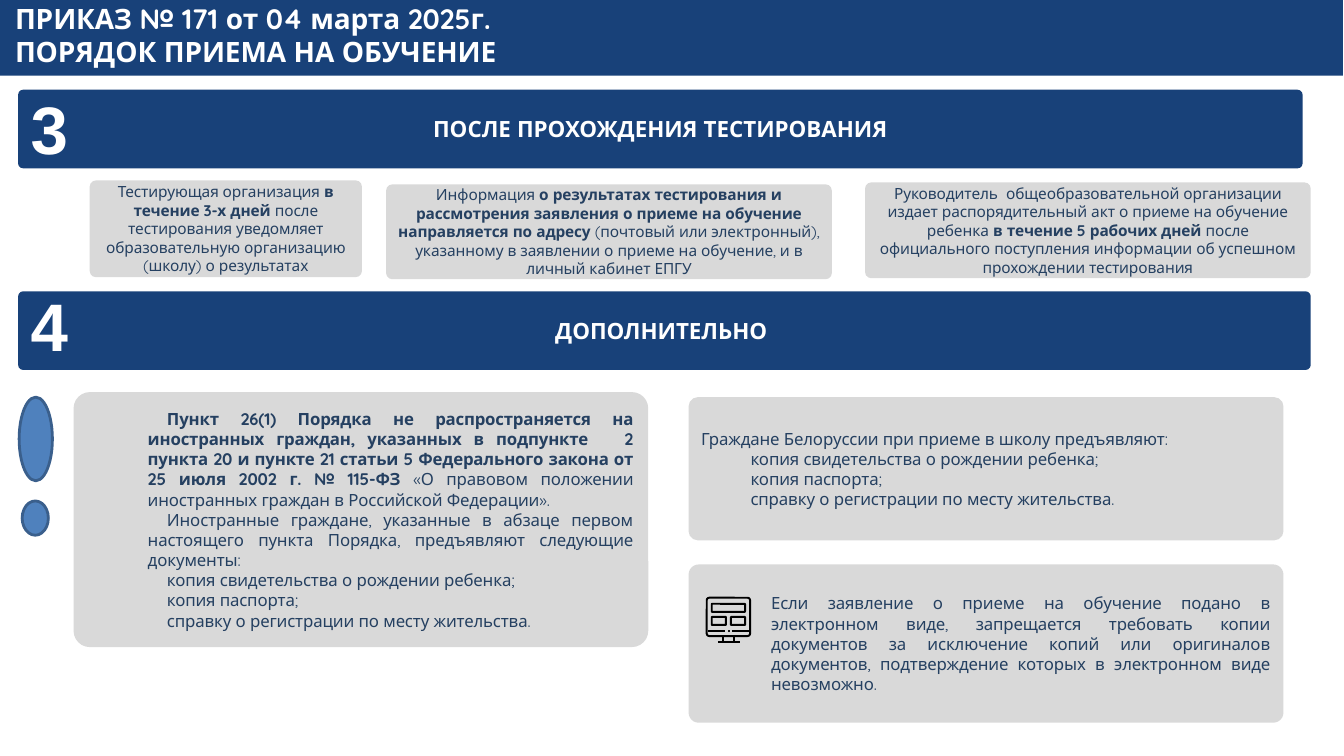
from pptx import Presentation
from pptx.dml.color import RGBColor
from pptx.enum.shapes import MSO_CONNECTOR, MSO_SHAPE
from pptx.enum.text import MSO_ANCHOR, PP_ALIGN
from pptx.oxml import parse_xml
from pptx.oxml.ns import nsdecls
from pptx.util import Emu, Pt

RECT, ROUND, OVAL = MSO_SHAPE.RECTANGLE, MSO_SHAPE.ROUNDED_RECTANGLE, MSO_SHAPE.OVAL
LINE = MSO_CONNECTOR.STRAIGHT
TOP, MIDDLE = MSO_ANCHOR.TOP, MSO_ANCHOR.MIDDLE
LEFT, CENTER, JUSTIFY = PP_ALIGN.LEFT, PP_ALIGN.CENTER, PP_ALIGN.JUSTIFY

COLORS = {
    "navy": "184179", "gray": "D9D9D9", "ink": "254061", "white": "FFFFFF",
    "blue": "4F81BD", "edge": "3A5F8C", "black": "000000",
}
PAPERS = [
    "копия свидетельства о рождении ребенка;",
    "копия паспорта;",
    "справку о регистрации по месту жительства.",
]


def px(n):
    return Emu(n * 9144)


def color(name):
    return RGBColor.from_string(COLORS[name])


class Page:
    """Draws styled elements on one slide, measured in px of 1/100 inch."""

    def __init__(self, deck):
        self.font = "Quicksand"
        self.shapes = deck.slides.add_slide(deck.slide_layouts[6]).shapes

    def shape(self, kind, box, fill=None, edge=None, width=2.0, adj=0.064):
        item = self.shapes.add_shape(kind, *map(px, box))
        item.shadow.inherit = False
        if kind == ROUND:
            item.adjustments[0] = adj
        if fill:
            item.fill.solid()
            item.fill.fore_color.rgb = color(fill)
        else:
            item.fill.background()
        if edge:
            item.line.color.rgb = color(edge)
            item.line.width = Pt(width)
        else:
            item.line.fill.background()
        return item

    def line(self, x1, y1, x2, y2, width):
        item = self.shapes.add_connector(LINE, *map(px, (x1, y1, x2, y2)))
        item.line.color.rgb = color("black")
        item.line.width = Pt(width)
        item._element.spPr.append(parse_xml(f"<a:effectLst {nsdecls('a')}/>"))

    def text(self, item, lines, size, tint, align, left=0, first=(0,), bold=False,
             font=None, anchor=MIDDLE, space=0):
        """Fill a shape with lines, where *stars* mark bold words."""
        frame = item.text_frame
        frame.word_wrap = True
        frame.vertical_anchor = anchor
        for i, line in enumerate(lines):
            para = frame.add_paragraph() if i else frame.paragraphs[0]
            para.alignment = align
            props = para._p.get_or_add_pPr()
            props.set("marL", str(px(left)))
            props.set("indent", str(px(first[min(i, len(first) - 1)])))
            for j, part in enumerate(line.split("*")):
                if not part:
                    continue
                run = para.add_run()
                run.text = part
                run.font.name = font or self.font
                run.font.size = Pt(size)
                run.font.bold = bold or j % 2 == 1
                run.font.color.rgb = color(tint)
                if space:
                    run._r.get_or_add_rPr().set("spc", str(space))

    def label(self, box, lines, size, **style):
        item = self.shapes.add_textbox(*map(px, box))
        self.text(item, lines, size, "white", bold=True, anchor=TOP, **style)
        return item.text_frame

    def band(self, box, text):
        self.text(self.shape(ROUND, box, "navy"), [text], 16, "white", CENTER, bold=True)

    def card(self, box, lines, size=12, align=JUSTIFY, **style):
        self.text(self.shape(ROUND, box, "gray"), lines, size, "ink", align, space=-10, **style)

    def screen(self, x, y):
        self.shape(ROUND, (x + 1, y + 1, 43, 38), edge="black", width=1.4)
        for dx, dy, w in ((6, 7, 33), (6, 20, 14), (25, 20, 14)):
            self.shape(ROUND, (x + dx, y + dy, w, 8), edge="black", width=1.4)
        for dx in (2, 26):
            self.line(x + dx, y + 34, x + dx + 17, y + 34, 1)
        self.shape(OVAL, (x + 22, y + 33, 2, 2), "black")
        for dx in (17, 28):
            self.line(x + dx, y + 40, x + dx, y + 44, 1.4)
        self.line(x + 12, y + 45, x + 34, y + 45, 1)


def main():
    deck = Presentation()
    deck.slide_width, deck.slide_height = px(1333), px(750)
    page = Page(deck)

    page.shape(RECT, (0, 0, 1332, 75), "navy")
    head = page.label((14, 0, 1096, 69), ["ПРИКАЗ № 171 от 04 марта 2025г.", "ПОРЯДОК ПРИЕМА НА ОБУЧЕНИЕ"],
                      20, align=LEFT, left=1, space=-10)
    head.margin_left = head.margin_right = head.margin_bottom = 0
    head.margin_top = px(1)

    page.band((18, 89, 1274, 78), "ПОСЛЕ ПРОХОЖДЕНИЯ ТЕСТИРОВАНИЯ")
    page.band((18, 289, 1282, 78), "ДОПОЛНИТЕЛЬНО ")
    for mark, y in (("3", 82), ("4", 277)):
        page.label((19, y, 60, 91), [mark], 48, align=CENTER, font="Arial")

    steps = [
        ((89, 179, 270, 96),
         "Тестирующая организация *в течение 3-х дней *после тестирования уведомляет "
         "образовательную организацию (школу) о результатах"),
        ((383, 183, 442, 94),
         "Информация *о результатах тестирования и рассмотрения заявления о приеме на обучение "
         "направляется по адресу *(почтовый или электронный), указанному в заявлении о приеме на "
         "обучение, и в личный кабинет ЕПГУ"),
        ((858, 181, 442, 95),
         "Руководитель  общеобразовательной организации издает распорядительный акт о приеме на "
         "обучение ребенка *в течение 5 рабочих дней *после официального поступления информации "
         "об успешном прохождении тестирования"),
    ]
    for box, text in steps:
        page.card(box, [text], 11, CENTER)

    page.card((73, 389, 570, 253), [
        "*Пункт 26(1) Порядка не распространяется на иностранных граждан, указанных в "
        "подпункте   2 пункта 20 и пункте 21 статьи 5 Федерального закона от 25 июля 2002 г. "
        "№ 115-ФЗ* «О правовом положении иностранных граждан в Российской Федерации».",
        "Иностранные граждане, указанные в абзаце первом настоящего пункта Порядка, "
        "предъявляют следующие документы: ",
    ] + PAPERS, left=59, first=(19,))
    page.card((683, 394, 590, 142), ["Граждане Белоруссии при приеме в школу предъявляют:"] + PAPERS,
              first=(0, 49))
    page.card((683, 560, 590, 157), [
        "Если заявление о приеме на обучение подано в электронном виде, запрещается требовать "
        "копии документов за исключение копий или оригиналов документов, подтверждение которых "
        "в электронном виде невозможно."], left=69)
    page.screen(700, 592)

    for box in ((19, 394, 33, 83), (22, 497, 26, 34)):
        page.shape(OVAL, box, "blue", "edge")

    deck.save("out.pptx")


if __name__ == "__main__":
    main()
